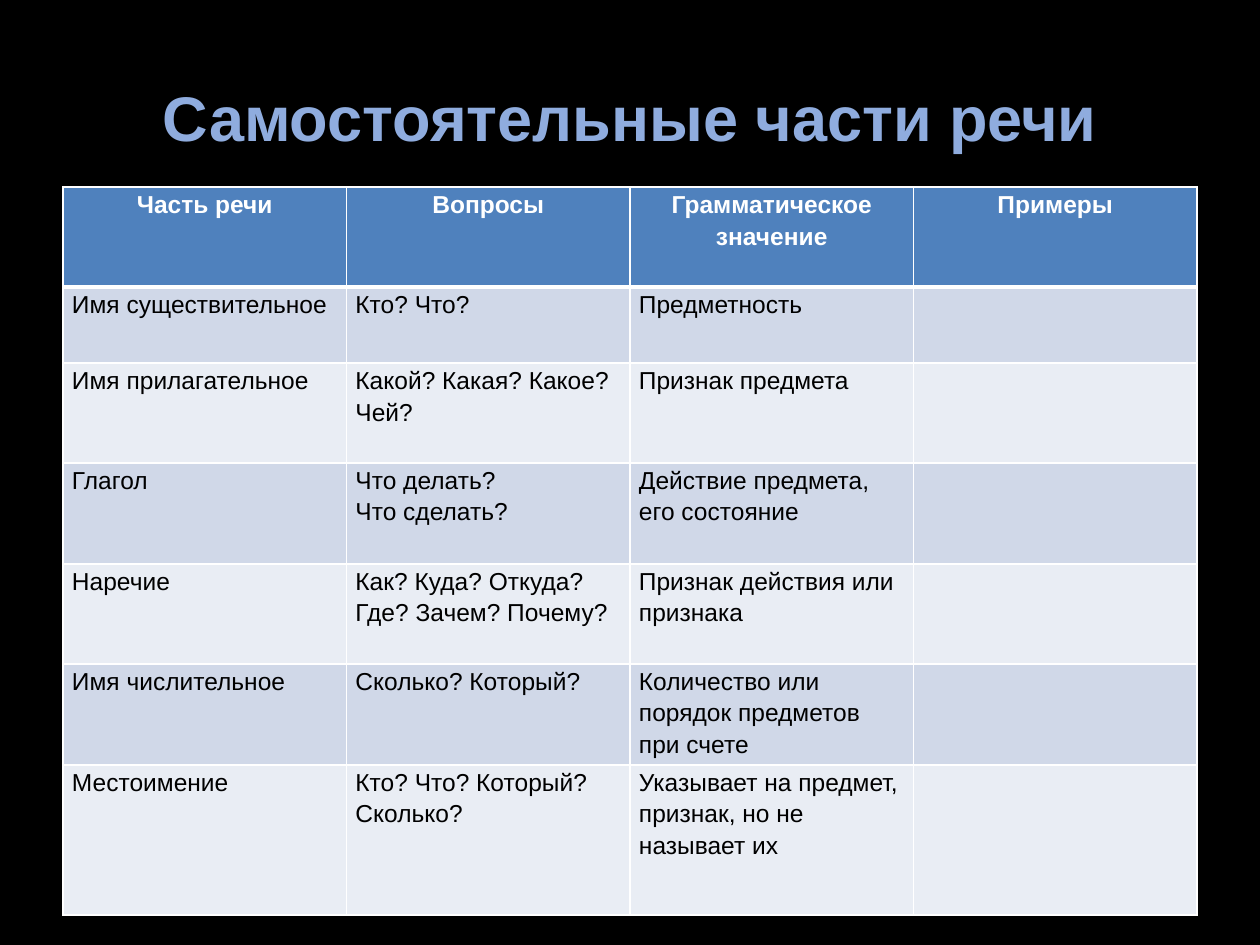
from dataclasses import dataclass

from lxml.etree import SubElement
from pptx import Presentation
from pptx.dml.color import RGBColor
from pptx.enum.text import MSO_ANCHOR as Anchor, PP_ALIGN as Align
from pptx.oxml.ns import qn
from pptx.util import Inches, Pt

SCALE = Inches(1) / 126
FONT = "Arial"
BLACK = RGBColor(0x00, 0x00, 0x00)
WHITE = RGBColor(0xFF, 0xFF, 0xFF)
TITLE_BLUE = RGBColor(0x8F, 0xAC, 0xDE)
HEADER_BLUE = RGBColor(0x4F, 0x81, 0xBD)
BAND_DARK = RGBColor(0xD0, 0xD8, 0xE8)
BAND_LIGHT = RGBColor(0xE9, 0xED, 0xF4)


@dataclass(frozen=True)
class Row:
    height: int
    texts: tuple[str, ...]


@dataclass(frozen=True)
class CellStyle:
    fill: RGBColor
    color: RGBColor
    bold: bool
    align: Align
    top: int
    bottom: int


ROWS = (
    Row(100, ("Часть речи", "Вопросы", "Грамматическое значение", "Примеры")),
    Row(76, ("Имя существительное", "Кто? Что?", "Предметность", "")),
    Row(100, ("Имя прилагательное", "Какой? Какая? Какое? Чей?",
              "Признак предмета", "")),
    Row(101, ("Глагол", "Что делать?\nЧто сделать?",
              "Действие предмета, его состояние", "")),
    Row(100, ("Наречие", "Как? Куда? Откуда? Где? Зачем? Почему?",
              "Признак действия или признака", "")),
    Row(101, ("Имя числительное", "Сколько? Который?",
              "Количество или порядок предметов при счете", "")),
    Row(150, ("Местоимение", "Кто? Что? Который? Сколько?",
              "Указывает на предмет, признак, но не называет их", "")),
)


def px(length: int) -> int:
    return round(length * SCALE)


def row_style(index: int) -> CellStyle:
    if index == 0:
        return CellStyle(HEADER_BLUE, WHITE, True, Align.CENTER, 1, 3)
    fill = BAND_DARK if index % 2 else BAND_LIGHT
    return CellStyle(fill, BLACK, False, Align.LEFT, 3 if index == 1 else 1, 1)


def add_borders(cell, style: CellStyle) -> None:
    properties = cell._tc.get_or_add_tcPr()
    widths = {"a:lnL": 1, "a:lnR": 1, "a:lnT": style.top, "a:lnB": style.bottom}
    for tag, width in widths.items():
        line = SubElement(properties, qn(tag), w=str(Pt(width)))
        fill = SubElement(line, qn("a:solidFill"))
        SubElement(fill, qn("a:srgbClr"), val=str(WHITE))


def fill_cell(cell, text: str, style: CellStyle) -> None:
    add_borders(cell, style)
    cell.fill.solid()
    cell.fill.fore_color.rgb = style.fill
    cell.margin_left = cell.margin_right = px(9)
    cell.margin_top = cell.margin_bottom = 0
    cell.text = text
    for paragraph in cell.text_frame.paragraphs:
        paragraph.alignment = style.align
        paragraph.line_spacing = 1.15
        paragraph.font.name = FONT
        paragraph.font.size = Pt(14)
        paragraph.font.bold = style.bold
        paragraph.font.color.rgb = style.color


def add_title(slide, text: str) -> None:
    title = slide.shapes.title
    title.left, title.top, title.width, title.height = map(px, (63, 38, 1134, 157))
    title.text_frame.text = text
    title.text_frame.vertical_anchor = Anchor.MIDDLE
    paragraph = title.text_frame.paragraphs[0]
    paragraph.alignment = Align.CENTER
    paragraph.font.name = FONT
    paragraph.font.size = Pt(36)
    paragraph.font.bold = True
    paragraph.font.color.rgb = TITLE_BLUE


def add_speech_table(slide, rows: tuple[Row, ...]) -> None:
    columns = len(rows[0].texts)
    height = sum(row.height for row in rows)
    table = slide.shapes.add_table(
        len(rows), columns, px(63), px(187), px(1134), px(height)).table
    for column in table.columns:
        column.width = px(1134) // columns
    for index, row in enumerate(rows):
        table.rows[index].height = px(row.height)
        for position, text in enumerate(row.texts):
            fill_cell(table.cell(index, position), text, row_style(index))


def main() -> None:
    presentation = Presentation()
    presentation.slide_width = px(1260)
    presentation.slide_height = px(945)
    slide = presentation.slides.add_slide(presentation.slide_layouts[5])
    slide.background.fill.solid()
    slide.background.fill.fore_color.rgb = BLACK
    add_title(slide, "Самостоятельные части речи")
    add_speech_table(slide, ROWS)
    presentation.save("out.pptx")


if __name__ == "__main__":
    main()
